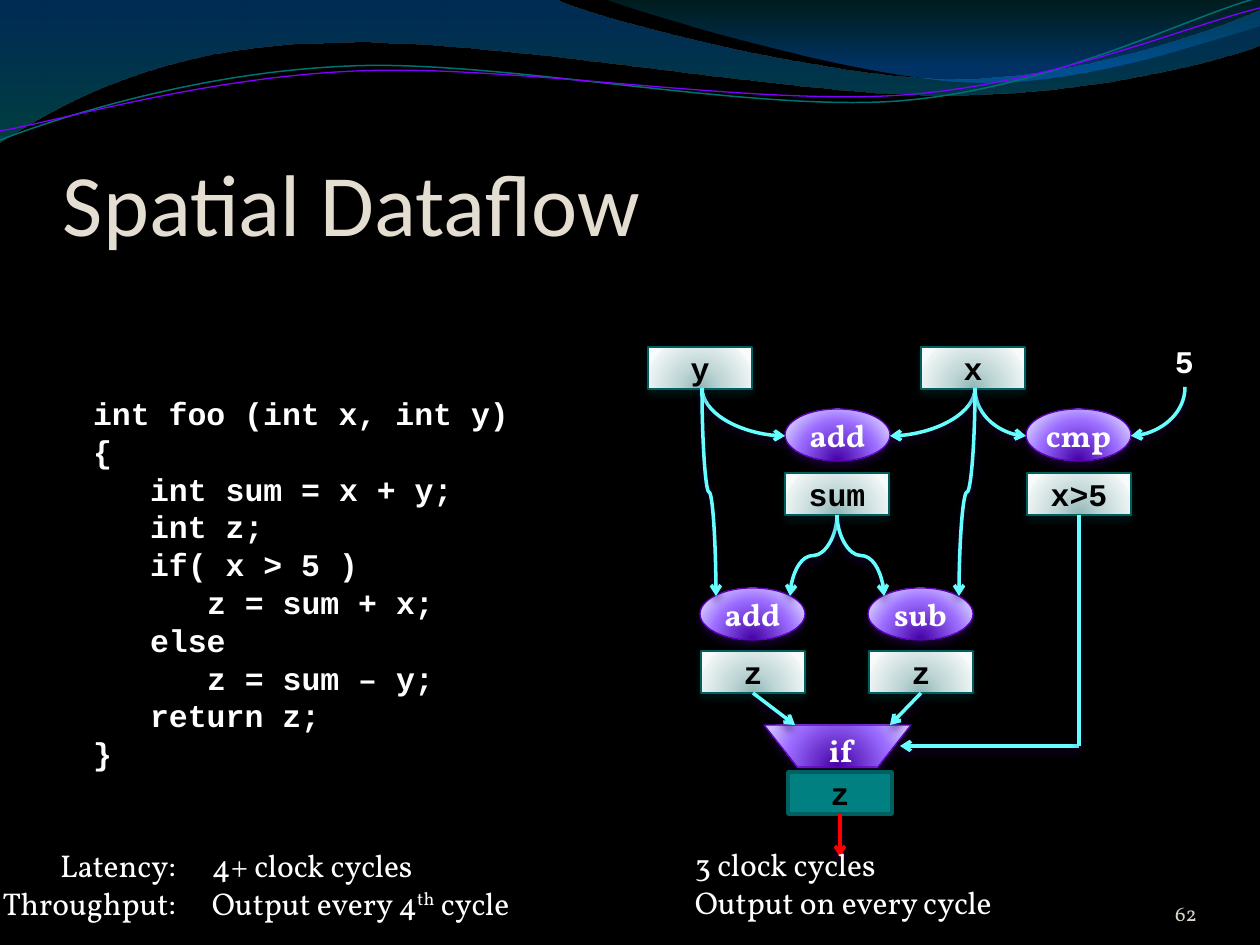
from dataclasses import dataclass

from lxml.etree import SubElement
from pptx import Presentation
from pptx.dml.color import RGBColor
from pptx.enum.shapes import MSO_CONNECTOR as Link, MSO_SHAPE as Preset
from pptx.enum.text import MSO_ANCHOR as Anchor, PP_ALIGN as Align
from pptx.oxml import parse_xml
from pptx.oxml.ns import nsdecls, qn
from pptx.util import Emu, Pt

EMU_PER_PX = 914400 / 126
BOTTOM = 2
LINEAR = '<a:lin ang="5400000" scaled="1"/>'
RADIAL = '<a:path path="circle"><a:fillToRect l="50000" t="130000" r="50000" b="-30000"/></a:path>'


@dataclass(frozen=True)
class Theme:
    back: str = "000000"
    white: str = "FFFFFF"
    title: str = "E3DED1"
    number: str = "D9D4C8"
    wire: str = "66FFFF"
    output: str = "FF0000"
    result: str = "008080"
    value_line: str = "005F5F"
    value_shadow: str = "002D2D"
    value_stops: tuple = ((0, "93B7B7"), (43, "C2D8D8"), (93, "ECF3F3"), (100, "F9FBFB"))
    op_line: str = "5F00BD"
    op_shadow: str = "2D005A"
    op_stops: tuple = ((0, "4400A5"), (68, "9B6CFF"), (100, "CDBDFF"))
    back_wave: tuple = ((0, "005FBD", 45), (100, "007474", 55))
    front_wave: tuple = ((0, "005F5F", 30), (80, "0071E1", 45))
    teal_wave: str = "007171"
    violet_wave: str = "8000FF"
    title_font: str = "Calibri"
    body_font: str = "Vollkorn"
    code_font: str = "Courier New"
    title_size: int = 50
    body_size: int = 18
    number_size: int = 12
    code_indent: int = 57


def px(length):
    return Emu(round(length * EMU_PER_PX))


def rgb(code):
    return RGBColor.from_string(code)


class Sheet:
    def __init__(self, slide, theme):
        self.slide, self.shapes, self.theme = slide, slide.shapes, theme
        slide.background.fill.solid()
        slide.background.fill.fore_color.rgb = rgb(theme.back)

    def gradient(self, shape, stops, direction):
        """Fill with (position, colour[, opacity]) stops."""
        marks = "".join(
            f'<a:gs pos="{pos * 1000}"><a:srgbClr val="{code}">'
            f'<a:alpha val="{(alpha or [100])[0] * 1000}"/></a:srgbClr></a:gs>'
            for pos, code, *alpha in stops)
        shape.fill.background()
        props = shape._element.spPr
        props.replace(props.find(qn("a:noFill")), parse_xml(
            f'<a:gradFill {nsdecls("a")} rotWithShape="1"><a:gsLst>{marks}</a:gsLst>{direction}</a:gradFill>'))

    def outline(self, shape, code, width):
        shape.line.color.rgb = rgb(code)
        shape.line.width = Pt(width)

    def cast_shadow(self, element, code):
        props = element.spPr
        effects = props.find(qn("a:effectLst"))
        if effects is None:
            effects = SubElement(props, qn("a:effectLst"))
        effects.append(parse_xml(
            f'<a:outerShdw {nsdecls("a")} blurRad="57150" dist="38100" dir="5400000" rotWithShape="0">'
            f'<a:srgbClr val="{code}"><a:alpha val="48000"/></a:srgbClr></a:outerShdw>'))

    def style(self, frame, font, size, code, bold=False, align=Align.LEFT):
        for paragraph in frame.paragraphs:
            paragraph.alignment = align
            for run in paragraph.runs:
                run.font.name, run.font.size, run.font.bold = font, Pt(size), bold
                run.font.color.rgb = rgb(code)

    def text(self, box, words, font=None, size=None, code=None, bold=False, align=Align.LEFT,
             anchor=Anchor.TOP, insets=(13, 6, 13, 6), wrap=True):
        theme = self.theme
        frame = self.shapes.add_textbox(*map(px, box)).text_frame
        frame.word_wrap, frame.vertical_anchor = wrap, anchor
        frame.margin_left, frame.margin_top, frame.margin_right, frame.margin_bottom = map(px, insets)
        frame.text = words
        self.style(frame, font or theme.body_font, size or theme.body_size,
                   code or theme.white, bold, align)
        return frame

    def wave(self, start, segments, stops=None, line=None, width=0.75):
        """Each segment is its end point, after two control points if it is a curve."""
        knots = [start] + [segment[-1] for segment in segments]
        outline = [(px(x), px(y)) for x, y in knots]
        builder = self.shapes.build_freeform(*outline[0], scale=1.0)
        builder.add_line_segments(outline[1:], close=bool(stops))
        shape = builder.convert_to_shape()
        self.bend(shape, segments)
        shape.shadow.inherit = False
        if stops:
            self.gradient(shape, stops, LINEAR)
            shape.line.fill.background()
        else:
            shape.fill.background()
            self.outline(shape, line, width)

    def bend(self, shape, segments):
        """Turn the straight sides that have control points into cubic curves."""
        sides = list(shape._element.spPr.iter(qn("a:lnTo")))
        for side, segment in zip(sides, segments):
            if len(segment) == 3:
                side.tag = qn("a:cubicBezTo")
                for place, (x, y) in enumerate(segment[:2]):
                    side.insert(place, parse_xml(
                        f'<a:pt {nsdecls("a")} x="{px(x) - shape.left}" y="{px(y) - shape.top}"/>'))

    def node(self, preset, box, label, stops, line, shadow, font, code):
        shape = self.shapes.add_shape(preset, *map(px, box))
        shape.shadow.inherit = False
        self.gradient(shape, stops, RADIAL)
        self.outline(shape, line, 0.75)
        self.cast_shadow(shape._element, shadow)
        if label:
            self.label(shape, label, font, code)
        return shape

    def label(self, shape, words, font, code):
        frame = shape.text_frame
        frame.margin_left = frame.margin_top = frame.margin_right = frame.margin_bottom = 0
        frame.vertical_anchor = Anchor.MIDDLE
        frame.text = words
        self.style(frame, font, self.theme.body_size, code, True, Align.CENTER)

    def value(self, x, y, label):
        t = self.theme
        return self.node(Preset.RECTANGLE, (x, y, 104, 42), label, t.value_stops,
                         t.value_line, t.value_shadow, t.code_font, t.back)

    def operation(self, x, y, label, preset=Preset.OVAL, size=(105, 52)):
        t = self.theme
        return self.node(preset, (x, y, *size), label, t.op_stops,
                         t.op_line, t.op_shadow, t.body_font, t.white)

    def result(self, x, y, label):
        shape = self.shapes.add_shape(Preset.RECTANGLE, *map(px, (x, y, 104, 42)))
        shape.shadow.inherit = False
        shape.fill.solid()
        shape.fill.fore_color.rgb = rgb(self.theme.result)
        self.outline(shape, self.theme.value_line, 2)
        self.label(shape, label, self.theme.code_font, self.theme.back)
        return shape

    def finish_wire(self, wire, code, arrow):
        self.outline(wire, code, 2)
        if arrow:
            SubElement(wire._element.spPr.find(qn("a:ln")), qn("a:tailEnd"), type="arrow")
        self.cast_shadow(wire._element, self.theme.op_shadow)

    def wire(self, start, end, source=None, code=None, arrow=True):
        wire = self.shapes.add_connector(Link.STRAIGHT, *map(px, start + end))
        if source is not None:
            wire.begin_connect(source, BOTTOM)
        self.finish_wire(wire, code or self.theme.wire, arrow)

    def curve(self, start, end, bends):
        """Curve that leaves downwards: 1 bend ends sideways, 2 bends end downwards."""
        (x1, y1), (x2, y2) = start, end
        length, spread = y2 - y1, abs(x2 - x1)
        left, top = (x1 + x2 - length) / 2, (y1 + y2 - spread) / 2
        wire = self.shapes.add_connector(Link.CURVE, *map(px, (left, top, left + length, top + spread)))
        props = wire._element.spPr
        props.find(qn("a:prstGeom")).set("prst", f"curvedConnector{bends + 1}")
        turn = props.find(qn("a:xfrm"))
        turn.set("rot", str((90 if x2 < x1 else 270) * 60000))
        if x2 > x1:
            turn.set("flipH", "1")
        self.finish_wire(wire, self.theme.wire, True)


def draw_waves(sheet):
    t = sheet.theme
    sheet.wave((0, 0), [[(554, -1)], [(600, 21), (837, 79), (955, 79)], [(1075, 79), (1207, 33), (1260, 11)],
                        [(1261, 45)], [(1239, 55), (1096, 96), (940, 95)], [(784, 95), (481, 35), (324, 43)],
                        [(163, 45), (58, 105), (-1, 142)]], t.back_wave)
    sheet.wave((604, -1), [[(641, 14), (859, 78), (969, 82)], [(1079, 87), (1211, 40), (1260, 26)],
                           [(1260, 0)]], t.front_wave)
    sheet.wave((0, 140), [[(60, 117), (199, 72), (349, 66)], [(498, 59), (747, 112), (898, 101)],
                          [(1050, 89), (1182, 19), (1257, -2)]], line=t.teal_wave, width=0.85)
    sheet.wave((0, 131), [[(59, 121), (207, 77), (357, 71)], [(508, 64), (752, 106), (903, 95)],
                          [(1053, 84), (1186, 26), (1260, 8)]], line=t.violet_wave)


def draw_code(sheet):
    t = sheet.theme
    lines = ((0, "int foo (int x, int y)"), (0, "{"), (1, "int sum = x + y;"), (1, "int z;"),
             (1, "if( x > 5 )"), (2, "z = sum + x;"), (1, "else"), (2, "z = sum – y;"),
             (1, "return z;"), (0, "}"))
    frame = sheet.text((80, 388, 445, 394), "\n".join(words for _, words in lines),
                       t.code_font, bold=True, wrap=False)
    for paragraph, (depth, _) in zip(frame.paragraphs, lines):
        if depth:
            paragraph._p.get_or_add_pPr().set("marL", str(px(depth * t.code_indent)))


def draw_dataflow(sheet):
    t = sheet.theme
    for x, y, label in ((785, 409, "add"), (1026, 409, "cmp"), (700, 588, "add"), (868, 588, "sub")):
        sheet.operation(x, y, label)
    choice = sheet.operation(764, 725, "", Preset.TRAPEZOID, (147, 42))
    choice.rotation = 180
    choice.adjustments[0] = 0.79
    sheet.text((816, 725, 50, 50), "if", bold=True)
    for x, y, label in ((648, 347, "y"), (921, 347, "x"), (785, 473, "sum")):
        sheet.value(x, y, label)
    added, subtracted = (sheet.value(x, 651, "z") for x in (701, 869))
    compared = sheet.value(1027, 473, "x>5")
    chosen = sheet.result(788, 772, "z")
    sheet.text((1162, 336, 45, 50), "5", t.code_font, bold=True, wrap=False)

    y, x, five, total = (702, 388), (975, 388), (1185, 387), (837, 515)
    for start, end in ((y, (785, 436)), (x, (890, 436)), (x, (1026, 436)), (five, (1131, 436))):
        sheet.curve(start, end, 1)
    for start, end in ((y, (716, 596)), (x, (959, 596)), (total, (790, 596)), (total, (884, 596))):
        sheet.curve(start, end, 2)
    sheet.wire((1079, 746), (900, 746))
    sheet.wire((1079, 515), (1079, 746), compared, arrow=False)
    sheet.wire((753, 693), (795, 725), added)
    sheet.wire((921, 693), (890, 725), subtracted)
    sheet.wire((840, 814), (840, 857), chosen, t.output)


def draw_timing(sheet):
    sheet.text((-53, 840, 242, 89), "Latency:\nThroughput:", align=Align.RIGHT)
    sequential = sheet.text((199, 840, 441, 89), "4+ clock cycles\nOutput every 4")
    ordinal = sequential.paragraphs[1]
    for words in ("th", " cycle"):
        ordinal.add_run().text = words
    sheet.style(sequential, sheet.theme.body_font, sheet.theme.body_size, sheet.theme.white)
    ordinal.runs[1]._r.get_or_add_rPr().set("baseline", "30000")
    sheet.text((682, 839, 441, 89), "3 clock cycles\nOutput on every cycle")


def main():
    deck = Presentation()
    deck.slide_width, deck.slide_height = px(1260), px(945)
    theme = Theme()
    sheet = Sheet(deck.slides.add_slide(deck.slide_layouts[6]), theme)
    draw_waves(sheet)
    sheet.text((63, 97, 1144, 157), "Spatial Dataflow", theme.title_font, theme.title_size,
               theme.title, anchor=Anchor.BOTTOM, insets=(0, 6, 0, 0))
    sheet.text((1092, 876, 105, 50), "62", size=theme.number_size, code=theme.number,
               align=Align.RIGHT, anchor=Anchor.BOTTOM, insets=(0, 0, 0, 0))
    draw_code(sheet)
    draw_dataflow(sheet)
    draw_timing(sheet)
    deck.save("out.pptx")


if __name__ == "__main__":
    main()
